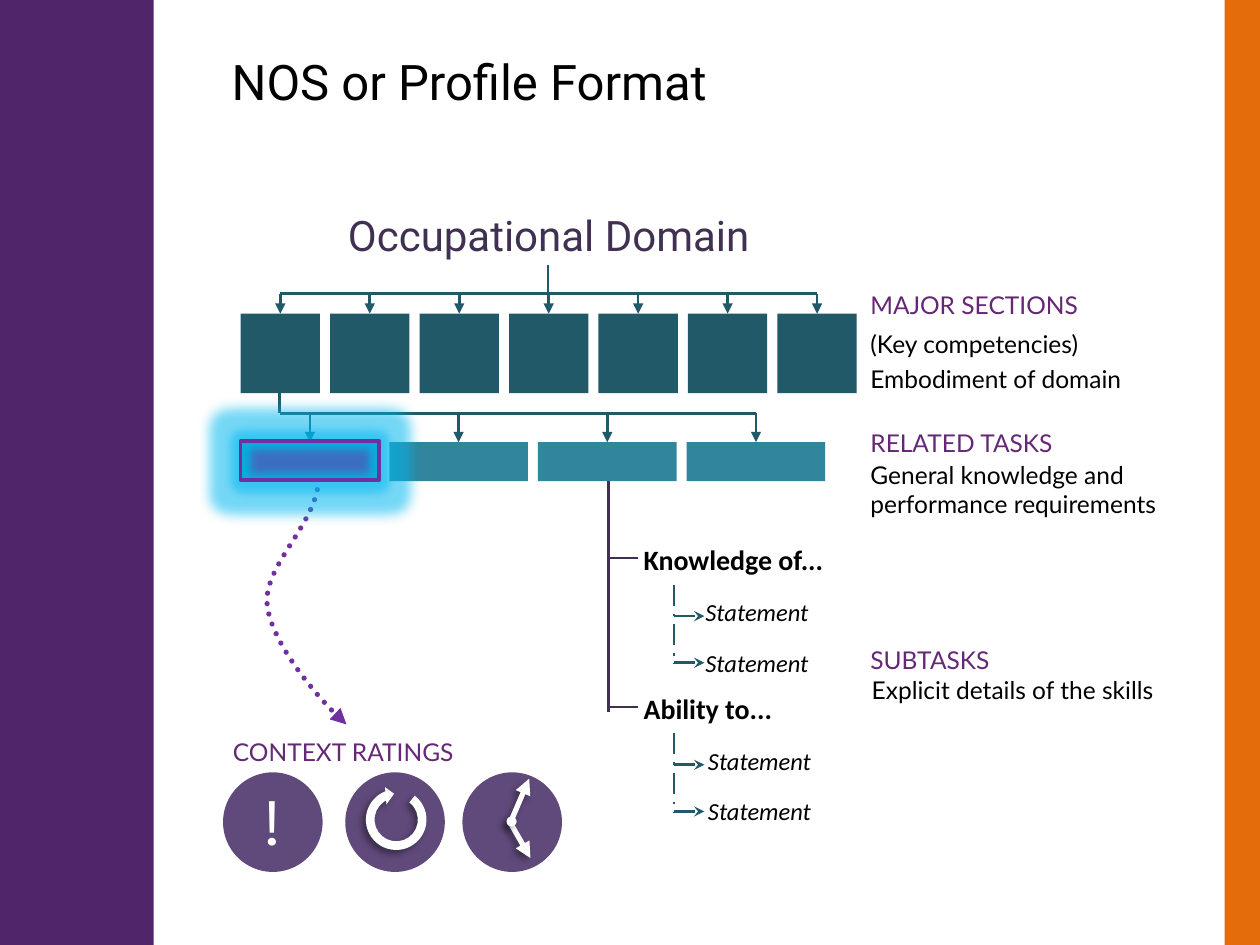
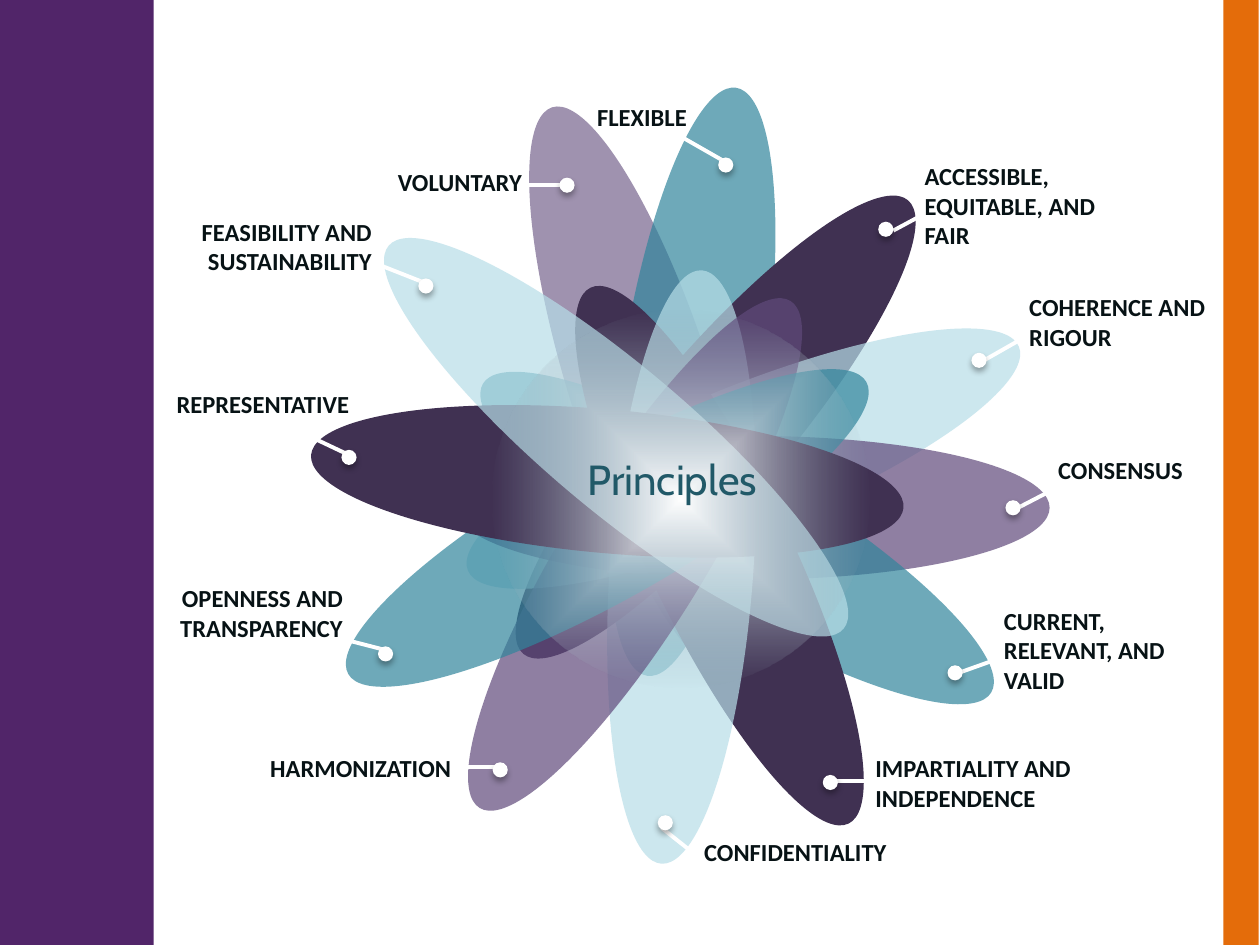
from lxml import etree
from pptx import Presentation
from pptx.dml.color import RGBColor
from pptx.enum.dml import MSO_LINE
from pptx.enum.shapes import MSO_CONNECTOR, MSO_SHAPE
from pptx.enum.text import PP_ALIGN
from pptx.oxml import parse_xml
from pptx.oxml.ns import nsdecls, qn
from pptx.util import Inches, Pt

COLOURS = {
    "band": "512569", "edge": "E46C0A", "heading": "652876", "black": "000000",
    "white": "FFFFFF", "ink": "071215", "deep": "215968", "teal": "31859C",
    "pale": "B7DEE8", "plum": "604A7B", "night": "403152", "violet": "7030A0",
    "glow": "00B8F0", "mist": "92A9B6",
}
ICON_SHADOW = (40, 4, 3, 135)
PIN_SHADOW = (32, 3.5, 2.2, 90)


def rgb(name):
    return RGBColor.from_string(COLOURS[name])


def colour_xml(name, alpha):
    return f'<a:srgbClr val="{COLOURS[name]}"><a:alpha val="{alpha * 1000}"/></a:srgbClr>'


def set_effects(shape, effects=""):
    shape._element.spPr.append(
        parse_xml(f'<a:effectLst {nsdecls("a")}>{effects}</a:effectLst>'))


def shadow_xml(shadow):
    if not shadow:
        return ""
    alpha, blur, distance, angle = shadow
    return (f'<a:outerShdw blurRad="{Pt(blur)}" dist="{Pt(distance)}" '
            f'dir="{angle * 60000}" rotWithShape="0">{colour_xml("black", alpha)}</a:outerShdw>')


def style_line(shape, colour, width, dash=None, arrow=None):
    shape.line.color.rgb = rgb(colour)
    shape.line.width = Pt(width)
    if dash:
        shape.line.dash_style = dash
    if arrow:
        etree.SubElement(shape.line._get_or_add_ln(), qn("a:tailEnd"), type=arrow)


def add_figure(page, kind, left, top, width, height, fill=None, alpha=100,
               outline=None, rotation=0, effects=""):
    figure = page.shapes.add_shape(kind, Inches(left), Inches(top), Inches(width), Inches(height))
    figure.rotation = rotation
    if fill:
        figure.fill.solid()
        figure.fill.fore_color.rgb = rgb(fill)
        if alpha < 100:
            tint = figure._element.spPr.find(".//" + qn("a:srgbClr"))
            etree.SubElement(tint, qn("a:alpha"), val=str(alpha * 1000))
    else:
        figure.fill.background()
    if outline:
        style_line(figure, outline, 2)
    else:
        figure.line.fill.background()
    set_effects(figure, effects)
    return figure


def add_line(page, x1, y1, x2, y2, colour, width=1.5, dash=None, arrow=None, shadow=None):
    line = page.shapes.add_connector(
        MSO_CONNECTOR.STRAIGHT, Inches(x1), Inches(y1), Inches(x2), Inches(y2))
    style_line(line, colour, width, dash, arrow)
    set_effects(line, shadow_xml(shadow))


def add_text(page, left, top, width, height, lines, size, font, colour,
             align=PP_ALIGN.LEFT, bold=False, italic=False, space_after=0):
    box = page.shapes.add_textbox(Inches(left), Inches(top), Inches(width), Inches(height))
    frame = box.text_frame
    frame.word_wrap = True
    for index, line in enumerate(lines):
        para = frame.add_paragraph() if index else frame.paragraphs[0]
        para.alignment = align
        para.space_after = Pt(space_after)
        span = para.add_run()
        span.text = line
        span.font.size = Pt(size)
        span.font.name = font
        span.font.bold = bold
        span.font.italic = italic
        span.font.color.rgb = rgb(colour)


def add_bands(page, edge_left):
    add_figure(page, MSO_SHAPE.RECTANGLE, 0, 0, 1.22, 7.5, "band")
    add_figure(page, MSO_SHAPE.RECTANGLE, edge_left, 0, 0.28, 7.5, "edge")


def bezier(start, first, second, end, steps=16):
    for step in range(1, steps + 1):
        t = step / steps
        u = 1 - t
        yield tuple(Inches(u**3 * a + 3 * u * u * t * b + 3 * u * t * t * c + t**3 * d)
                    for a, b, c, d in zip(start, first, second, end))


def add_ratings_curve(page, left, top):
    curves = [((0.4, 0), (0.48, 0.37), (-0.04, 0.75), (0, 1.08)),
              ((0, 1.08), (0.04, 1.44), (0.52, 1.94), (0.63, 2.03))]
    builder = page.shapes.build_freeform(Inches(left + 0.4), Inches(top))
    for curve in curves:
        placed = [(left + x, top + y) for x, y in curve]
        builder.add_line_segments(list(bezier(*placed)), close=False)
    arrow = builder.convert_to_shape()
    arrow.fill.background()
    style_line(arrow, "violet", 3, MSO_LINE.ROUND_DOT, "triangle")
    arrow.line._get_or_add_ln().set("cap", "rnd")
    set_effects(arrow)


def add_level(page, left, top, count, pitch, width, height, colour, drop, stem_x, stem_top):
    bus = top - drop
    centres = [left + width / 2 + index * pitch for index in range(count)]
    for centre in centres:
        add_figure(page, MSO_SHAPE.RECTANGLE, centre - width / 2, top, width, height, colour)
        add_line(page, centre, bus, centre, top, "deep", arrow="triangle")
    add_line(page, min(stem_x, centres[0]), bus, centres[-1], bus, "deep")
    add_line(page, stem_x, stem_top, stem_x, bus, "deep")


def add_subtask(page, left, top, heading, statement_left):
    dash = MSO_LINE.LONG_DASH_DOT
    add_line(page, left, top, left + 0.23, top, "night")
    add_text(page, left + 0.18, top - 0.17, 2.52, 0.38, [heading], 16, "Calibri", "black", bold=True)
    add_line(page, left + 0.52, top + 0.21, left + 0.52, top + 0.84, "deep", dash=dash)
    for offset in (0.46, 0.83):
        add_line(page, left + 0.52, top + offset, left + 0.76, top + offset, "deep",
                 dash=dash, arrow="stealth")
    add_text(page, statement_left, top + 0.26, 2.52, 0.74, ["Statement"] * 2, 14,
             "Calibri", "black", italic=True, space_after=12)


def add_highlight(page, left, top):
    glow = (f'<a:glow rad="{Inches(0.2)}">{colour_xml("glow", 55)}</a:glow>'
            f'<a:softEdge rad="{Inches(0.07)}"/>')
    add_figure(page, MSO_SHAPE.RECTANGLE, left + 0.01, top, 1.08, 0.33, "violet", 49, effects=glow)
    add_figure(page, MSO_SHAPE.RECTANGLE, left, top, 1.1, 0.31, outline="violet")


def add_context_ratings(page, left, top):
    add_text(page, left - 0.02, top - 0.33, 3.54, 0.34, ["CONTEXT RATINGS"], 14, "Lato", "heading")
    for offset in (0, 0.97, 1.9):
        add_figure(page, MSO_SHAPE.OVAL, left + offset, top, 0.79, 0.79, "plum")
    add_text(page, left + 0.14, top - 0.02, 0.5, 0.77, ["!"], 40, "Karla", "white", PP_ALIGN.CENTER)
    shadow = shadow_xml(ICON_SHADOW)
    cycle = add_figure(page, MSO_SHAPE.CIRCULAR_ARROW, left + 1.1, top + 0.1, 0.55, 0.55,
                       "white", rotation=265.3, effects=shadow)
    for index, value in enumerate((0.125, 11.42, 204.58, 25.39, 0.125)):
        cycle.adjustments[index] = value
    for x, y in ((2.43, 0.05), (2.44, 0.68)):
        add_line(page, left + 2.28, top + 0.4, left + x, top + y, "white", 3,
                 arrow="triangle", shadow=ICON_SHADOW)
    add_figure(page, MSO_SHAPE.OVAL, left + 2.25, top + 0.35, 0.08, 0.08, "white", effects=shadow)


def add_side_notes(page, left):
    notes = [
        ("MAJOR SECTIONS", 0, 2.25, "heading"), ("(Key competencies)", 0, 2.56, "black"),
        ("Embodiment of domain", 0, 2.84, "black"), ("RELATED TASKS", 0, 3.35, "heading"),
        ("General knowledge and performance requirements", 0, 3.6, "black"),
        ("SUBTASKS", 0, 5.07, "heading"), ("Explicit details of the skills", 0.01, 5.31, "black"),
    ]
    for words, shift, top, colour in notes:
        add_text(page, left + shift, top, 2.83, 0.34, [words], 14, "Lato", colour)


def build_format_slide(deck):
    page = deck.slides.add_slide(deck.slide_layouts[6])
    add_ratings_curve(page, 2.12, 3.72)
    add_line(page, 4.83, 3.82, 4.83, 5.65, "night")
    add_subtask(page, 4.83, 4.43, "Knowledge of...", 5.5)
    add_subtask(page, 4.83, 5.61, "Ability to...", 5.52)
    add_text(page, 2.4, 1.61, 3.91, 0.5, ["Occupational Domain"], 24, "Roboto", "night",
             PP_ALIGN.CENTER)
    add_level(page, 1.91, 2.49, 7, 0.71, 0.63, 0.63, "deep", 0.16, 4.35, 2.1)
    add_level(page, 1.91, 3.51, 4, 1.18, 1.1, 0.31, "teal", 0.23, 2.22, 3.12)
    add_highlight(page, 1.91, 3.5)
    add_context_ratings(page, 1.77, 6.13)
    add_side_notes(page, 6.81)
    add_text(page, 1.74, 0.36, 7.75, 0.57, ["NOS or Profile Format"], 28, "Roboto", "black")
    add_bands(page, 9.72)


def add_petals(page):
    tints = [("plum", 70), ("teal", 70), ("night", 100), ("pale", 70)]
    places = [
        (4.53, 0.74, 342.3), (4.92, 0.67, 8.6), (5.11, 1.03, 40.3), (5.33, 1.28, 67.9),
        (5.4, 1.67, 90), (5.28, 1.91, 121.3), (5.14, 2.05, 154.3), (4.84, 2.14, 183.9),
        (4.47, 2.04, 211.5), (4.25, 1.83, 240.6), (4.25, 1.46, 275.1), (4.32, 1.11, 310.1),
    ]
    for index, (left, top, angle) in enumerate(places):
        colour, alpha = tints[index % len(tints)]
        add_figure(page, MSO_SHAPE.OVAL, left, top, 1.14, 4.72, colour,
                   alpha if index else 60, rotation=angle)


def add_principle(page, words, label, leader, pin, align):
    add_line(page, *leader, "white", 2.25)
    left, top, width = label
    add_text(page, left, top, width, 0.34, [words], 14, "Calibri", "ink", align, bold=True)
    add_figure(page, MSO_SHAPE.OVAL, *pin, 0.12, 0.12, "white", effects=shadow_xml(PIN_SHADOW))


def add_core(page, left, top, size):
    core = add_figure(page, MSO_SHAPE.OVAL, left, top, size, size)
    properties = core._element.spPr
    properties.replace(properties.find(qn("a:noFill")), parse_xml(
        f'<a:gradFill {nsdecls("a")} rotWithShape="1"><a:gsLst>'
        f'<a:gs pos="0">{colour_xml("white", 100)}</a:gs>'
        f'<a:gs pos="100000">{colour_xml("mist", 0)}</a:gs></a:gsLst>'
        '<a:path path="shape"><a:fillToRect l="50000" t="50000" r="50000" b="50000"/></a:path>'
        '</a:gradFill>'))
    add_text(page, left - 0.06, top + 1.09, 2.99, 0.5, ["Principles"], 24, "Cabin", "deep",
             PP_ALIGN.CENTER)


def build_principles_slide(deck):
    page = deck.slides.add_slide(deck.slide_layouts[6])
    add_bands(page, 9.71)
    add_petals(page)
    right_side = [
        ("ACCESSIBLE, EQUITABLE, AND FAIR", (7.24, 1.23, 1.94), (7.09, 1.83, 7.76, 1.47), (6.97, 1.76)),
        ("COHERENCE AND RIGOUR", (8.07, 2.27, 2.28), (7.81, 2.86, 8.46, 2.49), (7.71, 2.8)),
        ("CONSENSUS", (8.3, 3.56, 1.69), (8.08, 4.03, 8.62, 3.75), (7.98, 3.97)),
        ("CURRENT, RELEVANT, AND VALID", (7.87, 4.76, 1.77), (7.61, 5.34, 8.31, 5.09), (7.52, 5.28)),
        ("IMPARTIALITY AND INDEPENDENCE", (6.85, 5.93, 2.37), (6.63, 6.2, 7.34, 6.2), (6.53, 6.15)),
        ("CONFIDENTIALITY", (5.49, 6.59, 2.05), (5.25, 6.57, 5.49, 6.76), (5.22, 6.47)),
    ]
    left_side = [
        ("HARMONIZATION", (1.63, 5.93, 2.05), (3.28, 6.09, 3.99, 6.09), (3.91, 6.05)),
        ("OPENNESS AND TRANSPARENCY", (0.77, 4.58, 2.05), (2.48, 5.01, 3.1, 5.17), (3, 5.13)),
        ("REPRESENTATIVE", (0.92, 3.04, 1.95), (2.24, 3.36, 2.81, 3.63), (2.71, 3.57)),
        ("FEASIBILITY AND SUSTAINABILITY", (1, 1.67, 2.05), (2.8, 2.02, 3.41, 2.26), (3.32, 2.21)),
        ("VOLUNTARY", (2.19, 1.28, 2.05), (3.78, 1.47, 4.49, 1.47), (4.44, 1.41)),
        ("FLEXIBLE", (3.5, 0.76, 2.05), (5.24, 0.99, 5.8, 1.31), (5.7, 1.25)),
    ]
    for principles, align in ((right_side, PP_ALIGN.LEFT), (left_side, PP_ALIGN.RIGHT)):
        for principle in principles:
            add_principle(page, *principle, align)
    add_core(page, 3.9, 2.46, 3)


def main():
    deck = Presentation()
    deck.slide_width = Inches(10)
    deck.slide_height = Inches(7.5)
    build_format_slide(deck)
    build_principles_slide(deck)
    deck.save("out.pptx")


if __name__ == "__main__":
    main()
